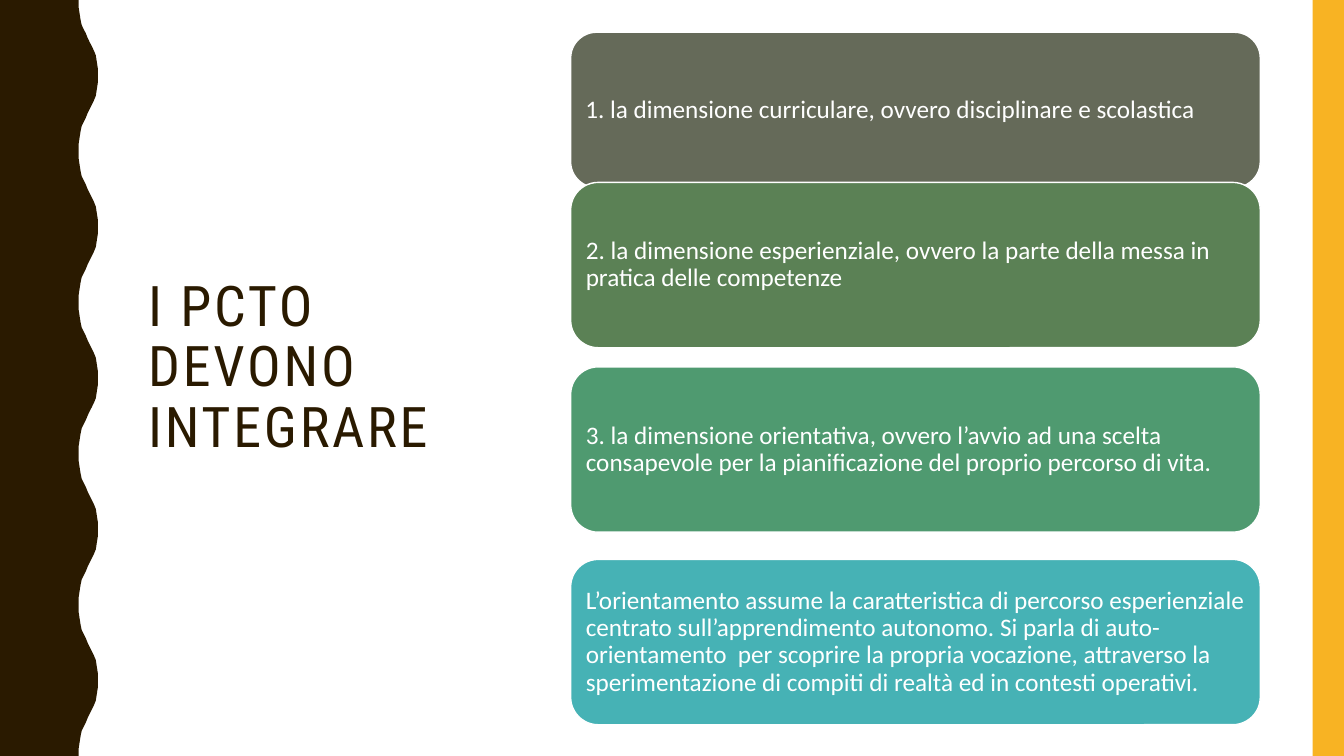
"""Build the slide on the dimensions that the PCTO programmes must integrate."""
from dataclasses import dataclass

from lxml.etree import SubElement
from pptx import Presentation
from pptx.dml.color import RGBColor
from pptx.enum.shapes import MSO_SHAPE as Preset
from pptx.enum.text import MSO_ANCHOR as Anchor, PP_ALIGN as Align
from pptx.oxml.ns import qn
from pptx.util import Emu, Inches, Pt

WIDTH, HEIGHT = Inches(13.33), Inches(7.5)
COLOURS = {
    "brown": "2A1A00", "yellow": "F8B323", "white": "FFFFFF", "olive": "656A59",
    "moss": "5B8155", "green": "4F9A70", "teal": "46B2B5",
}
WAVE_PERIOD, WAVE_COUNT = 20, 5
HALF_WAVE = [
    (5.85, 0), (5.85, 0.93), (5.93, 1.87), (6, 2.67), (6.08, 3.33),
    (6.23, 3.87), (6.38, 4.4), (6.53, 5.07), (6.68, 5.6), (6.83, 6.13),
    (6.98, 6.67), (7.13, 7.33), (7.2, 8.13), (7.28, 9.07), (7.28, 10),
]


@dataclass(frozen=True)
class Area:
    """A rectangle in percent of the slide's width and height."""
    left: float
    top: float
    width: float
    height: float

    def lengths(self) -> tuple:
        """Return left, top, width and height as lengths."""
        return across(self.left), down(self.top), across(self.width), down(self.height)


@dataclass(frozen=True)
class Dimension:
    """A coloured box with its statement."""
    top: float
    height: float
    colour: str
    text: str


DIMENSIONS = [
    Dimension(4.27, 20.53, "olive",
              "1. la dimensione curriculare, ovvero disciplinare e scolastica"),
    Dimension(24.13, 21.87, "moss",
              "2. la dimensione esperienziale, ovvero la parte della messa in "
              "pratica delle competenze"),
    Dimension(48.53, 21.87, "green",
              "3. la dimensione orientativa, ovvero l’avvio ad una scelta "
              "consapevole per la pianificazione del proprio percorso di vita."),
    Dimension(74, 21.87, "teal",
              "L’orientamento assume la caratteristica di percorso esperienziale "
              "centrato sull’apprendimento autonomo. Si parla di auto-orientamento  "
              "per scoprire la propria vocazione, attraverso la sperimentazione di "
              "compiti di realtà ed in contesti operativi."),
]


def across(share: float) -> Emu:
    """Convert percent of the width to a length."""
    return Emu(round(WIDTH * share / 100))


def down(share: float) -> Emu:
    """Convert percent of the height to a length."""
    return Emu(round(HEIGHT * share / 100))


def colour_of(name: str) -> RGBColor:
    """Look up a named colour."""
    return RGBColor.from_string(COLOURS[name])


def paint(shape, colour: str) -> None:
    """Give a shape a flat fill without line or shadow."""
    shape.shadow.inherit = False
    shape.fill.solid()
    shape.fill.fore_color.rgb = colour_of(colour)
    shape.line.fill.background()


def write(box, text: str, font: str, size: float, colour: str):
    """Fill a box with one left-aligned paragraph and return its run."""
    frame = box.text_frame
    frame.text = text
    frame.word_wrap = True
    frame.vertical_anchor = Anchor.MIDDLE
    para = frame.paragraphs[0]
    para.alignment = Align.LEFT
    para.line_spacing = 0.9
    span = para.runs[0]
    span.font.name = font
    span.font.size = Pt(size)
    span.font.color.rgb = colour_of(colour)
    return span


def draw_wave(page) -> None:
    """Draw the brown edge with its repeating wave."""
    mirrored = [(x, WAVE_PERIOD - y) for x, y in reversed(HALF_WAVE[1:-1])]
    edge = [(across(x), down(y + WAVE_PERIOD * index))
            for index in range(WAVE_COUNT) for x, y in HALF_WAVE + mirrored]
    builder = page.shapes.build_freeform(0, 0)
    builder.add_line_segments(edge + [(across(HALF_WAVE[0][0]), HEIGHT), (0, HEIGHT)])
    paint(builder.convert_to_shape(), "brown")


def draw_title(page, area: Area) -> None:
    """Write the spaced title."""
    box = page.shapes.add_textbox(*area.lengths())
    span = write(box, "I PCTO DEVONO INTEGRARE", "Roboto Condensed", 40, "brown")
    span.font._element.set("spc", "200")


def draw_dimension(page, dimension: Dimension) -> None:
    """Draw one rounded box with its statement."""
    area = Area(42.46, dimension.top, 51.31, dimension.height)
    box = page.shapes.add_shape(Preset.ROUNDED_RECTANGLE, *area.lengths())
    paint(box, dimension.colour)
    box.line.color.rgb = colour_of("white")
    box.line.width = Pt(1)
    write(box, dimension.text, "Calibri", 18, "white")
    frame = box.text_frame
    frame.margin_left = frame.margin_right = Inches(0.15)
    frame.margin_top = frame.margin_bottom = Inches(0.07)
    body = frame._txBody.bodyPr
    for inset in ("lIns", "rIns"):
        body.set(inset, str(Inches(0.07)))
    place_text(box)


def place_text(box) -> None:
    """Leave the rounded corner's own inset to the preset and fix the space after."""
    properties = box.text_frame.paragraphs[0]._p.get_or_add_pPr()
    space = SubElement(properties, qn("a:spcAft"))
    SubElement(space, qn("a:spcPct")).set("val", "35000")


def main() -> None:
    """Draw the slide and save it."""
    deck = Presentation()
    deck.slide_width, deck.slide_height = WIDTH, HEIGHT
    page = deck.slides.add_slide(deck.slide_layouts[6])
    draw_wave(page)
    band = page.shapes.add_shape(Preset.RECTANGLE, *Area(97.67, 0, 2.33, 100).lengths())
    paint(band, "yellow")
    draw_title(page, Area(10.28, 9.33, 27.76, 78.93))
    for dimension in DIMENSIONS:
        draw_dimension(page, dimension)
    deck.save("out.pptx")


if __name__ == "__main__":
    main()
